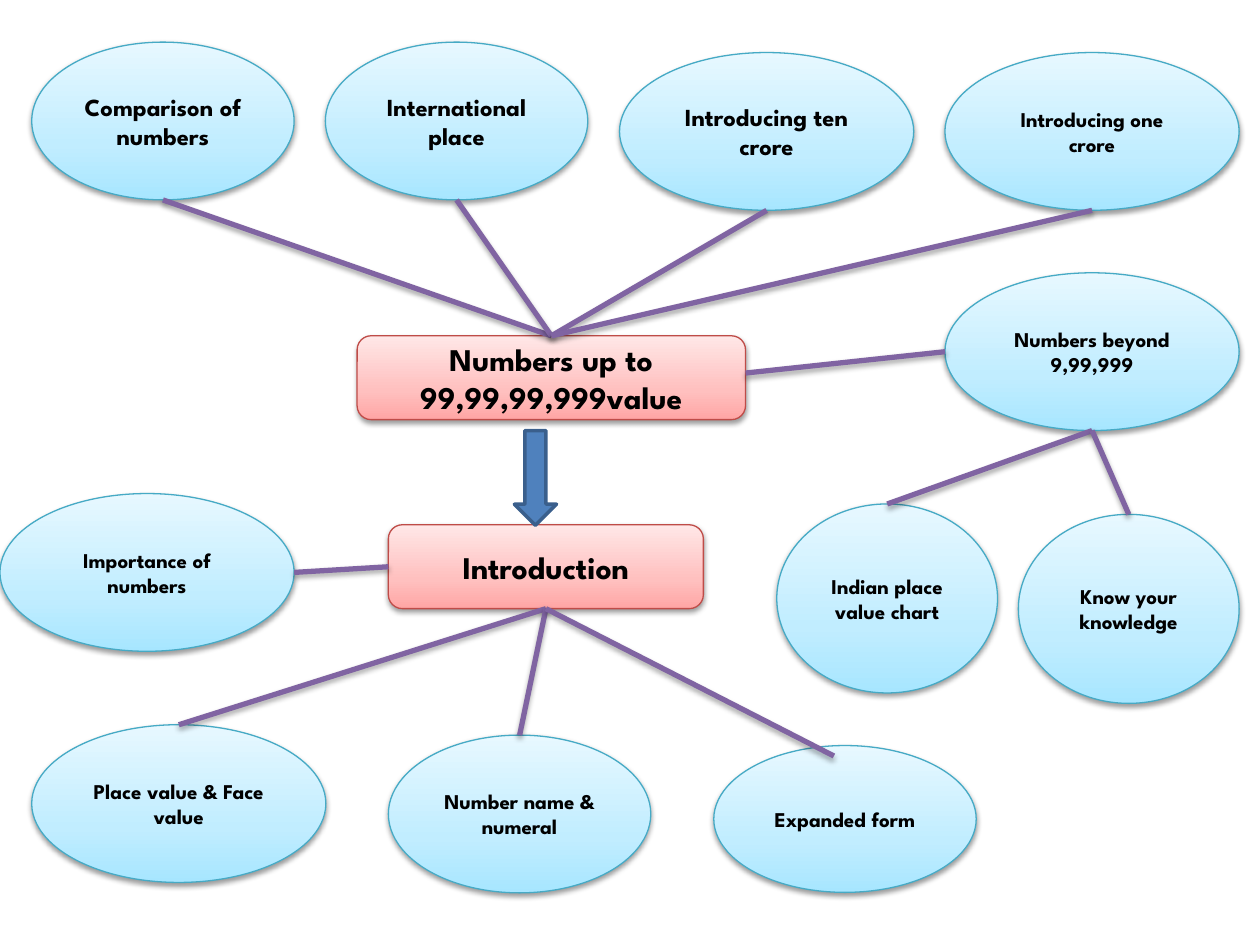
"""Build a concept map of the topics around numbers up to 99,99,99,999."""

from lxml.etree import SubElement
from pptx import Presentation
from pptx.dml.color import RGBColor
from pptx.enum.shapes import MSO_CONNECTOR, MSO_SHAPE
from pptx.enum.text import MSO_ANCHOR, PP_ALIGN
from pptx.oxml import parse_xml
from pptx.oxml.ns import nsdecls, qn
from pptx.util import Cm, Pt

BLACK = RGBColor(0x00, 0x00, 0x00)
TEAL = RGBColor(0x46, 0xAA, 0xC5)
RED = RGBColor(0xBF, 0x4C, 0x48)
PURPLE = RGBColor(0x80, 0x64, 0xA2)
BLUE = RGBColor(0x4F, 0x81, 0xBD)
DARK_BLUE = RGBColor(0x3A, 0x5F, 0x8C)
AQUA_STOPS = [RGBColor(0xA7, 0xE6, 0xFF), RGBColor(0xC1, 0xED, 0xFF), RGBColor(0xE7, 0xF8, 0xFF)]
ROSE_STOPS = [RGBColor(0xFF, 0xA6, 0xA5), RGBColor(0xFF, 0xC0, 0xBF), RGBColor(0xFF, 0xE7, 0xE7)]
FONT = "League Spartan"


def add_shadow(shape, distance, opacity):
    properties = shape._element.spPr
    for effects in properties.findall(qn("a:effectLst")):
        properties.remove(effects)
    properties.append(parse_xml(
        f'<a:effectLst {nsdecls("a")}><a:outerShdw blurRad="{Pt(3.1)}" dist="{Pt(distance)}" '
        f'dir="5400000" rotWithShape="0"><a:srgbClr val="000000"><a:alpha val="{opacity * 1000}"/>'
        '</a:srgbClr></a:outerShdw></a:effectLst>'))


def add_topic(kind, text, left, top, width, height, size, stops, line_color):
    box = page.shapes.add_shape(kind, Cm(left), Cm(top), Cm(width), Cm(height))
    box.fill.gradient()
    box.fill.gradient_angle = 90
    stop_list = box._element.spPr.find(qn("a:gradFill")).find(qn("a:gsLst"))
    for stop in list(stop_list):
        stop_list.remove(stop)
    for position, color in zip((0, 35, 100), stops):
        stop = SubElement(stop_list, qn("a:gs"), pos=str(position * 1000))
        SubElement(stop, qn("a:srgbClr"), val=str(color))
    box.line.color.rgb = line_color
    box.line.width = Pt(0.75)
    add_shadow(box, 1.6, 38)
    frame = box.text_frame
    frame.word_wrap = True
    frame.vertical_anchor = MSO_ANCHOR.MIDDLE
    paragraph = frame.paragraphs[0]
    paragraph.text = text
    paragraph.alignment = PP_ALIGN.CENTER
    paragraph.font.name = FONT
    paragraph.font.size = Pt(size)
    paragraph.font.bold = True
    paragraph.font.color.rgb = BLACK
    return box


deck = Presentation()
deck.slide_width, deck.slide_height = Cm(25.4), Cm(19.05)
page = deck.slides.add_slide(deck.slide_layouts[6])

ovals = {}
for text, left, top, width, height, size in [
    ("Place value & Face value", 0.64, 14.61, 5.93, 3.18, 12),
    ("Comparison of numbers", 0.64, 0.85, 5.29, 3.18, 14),
    ("International place", 6.56, 0.85, 5.29, 3.18, 14),
    ("Introducing ten crore", 12.49, 1.06, 5.93, 3.18, 14),
    ("Introducing one crore", 19.05, 1.06, 5.93, 3.18, 12),
    ("Indian place value chart", 15.66, 10.16, 4.45, 3.81, 12),
    ("Importance of numbers", 0, 9.95, 5.93, 3.18, 12),
    ("Number name & numeral", 7.83, 14.82, 5.29, 3.18, 12),
    ("Expanded form", 14.39, 15.03, 5.29, 2.96, 12),
    ("Know your knowledge", 20.53, 10.37, 4.45, 3.81, 12),
    ("Numbers beyond 9,99,999", 19.05, 5.5, 5.93, 3.18, 12),
]:
    ovals[text] = add_topic(MSO_SHAPE.OVAL, text, left, top, width, height, size, AQUA_STOPS, TEAL)

numbers = add_topic(MSO_SHAPE.ROUNDED_RECTANGLE, "Numbers up to 99,99,99,999value",
                    7.2, 6.77, 7.83, 1.69, 18, ROSE_STOPS, RED)
introduction = add_topic(MSO_SHAPE.ROUNDED_RECTANGLE, "Introduction",
                         7.83, 10.58, 6.35, 1.69, 18, ROSE_STOPS, RED)

arrow = page.shapes.add_shape(MSO_SHAPE.DOWN_ARROW, Cm(10.37), Cm(8.68), Cm(0.85), Cm(1.91))
arrow.shadow.inherit = False
arrow.fill.solid()
arrow.fill.fore_color.rgb = BLUE
arrow.line.color.rgb = DARK_BLUE
arrow.line.width = Pt(2)

tops = {name: (oval.left + oval.width // 2, oval.top) for name, oval in ovals.items()}
bottoms = {name: (x, y + ovals[name].height) for name, (x, y) in tops.items()}
importance = ovals["Importance of numbers"]
beyond = ovals["Numbers beyond 9,99,999"]
beyond_bottom = bottoms["Numbers beyond 9,99,999"]

links = [(bottoms[name], numbers, 0) for name in (
    "Comparison of numbers", "International place", "Introducing ten crore", "Introducing one crore")]
links += [(tops[name], introduction, 2) for name in ("Place value & Face value", "Number name & numeral")]
links += [
    ((Cm(16.81), Cm(15.24)), introduction, 2),
    ((importance.left + importance.width, importance.top + importance.height // 2), introduction, 1),
    (beyond_bottom, ovals["Indian place value chart"], 0),
    (beyond_bottom, ovals["Know your knowledge"], 0),
    ((beyond.left, beyond.top + beyond.height // 2), None, None),
]
for (x, y), target, side in links:
    link = page.shapes.add_connector(MSO_CONNECTOR.STRAIGHT, x, y, Cm(15.03), Cm(7.52))
    if target is not None:
        link.end_connect(target, side)
    link.line.color.rgb = PURPLE
    link.line.width = Pt(3)
    add_shadow(link, 1.8, 35)

deck.save("out.pptx")
